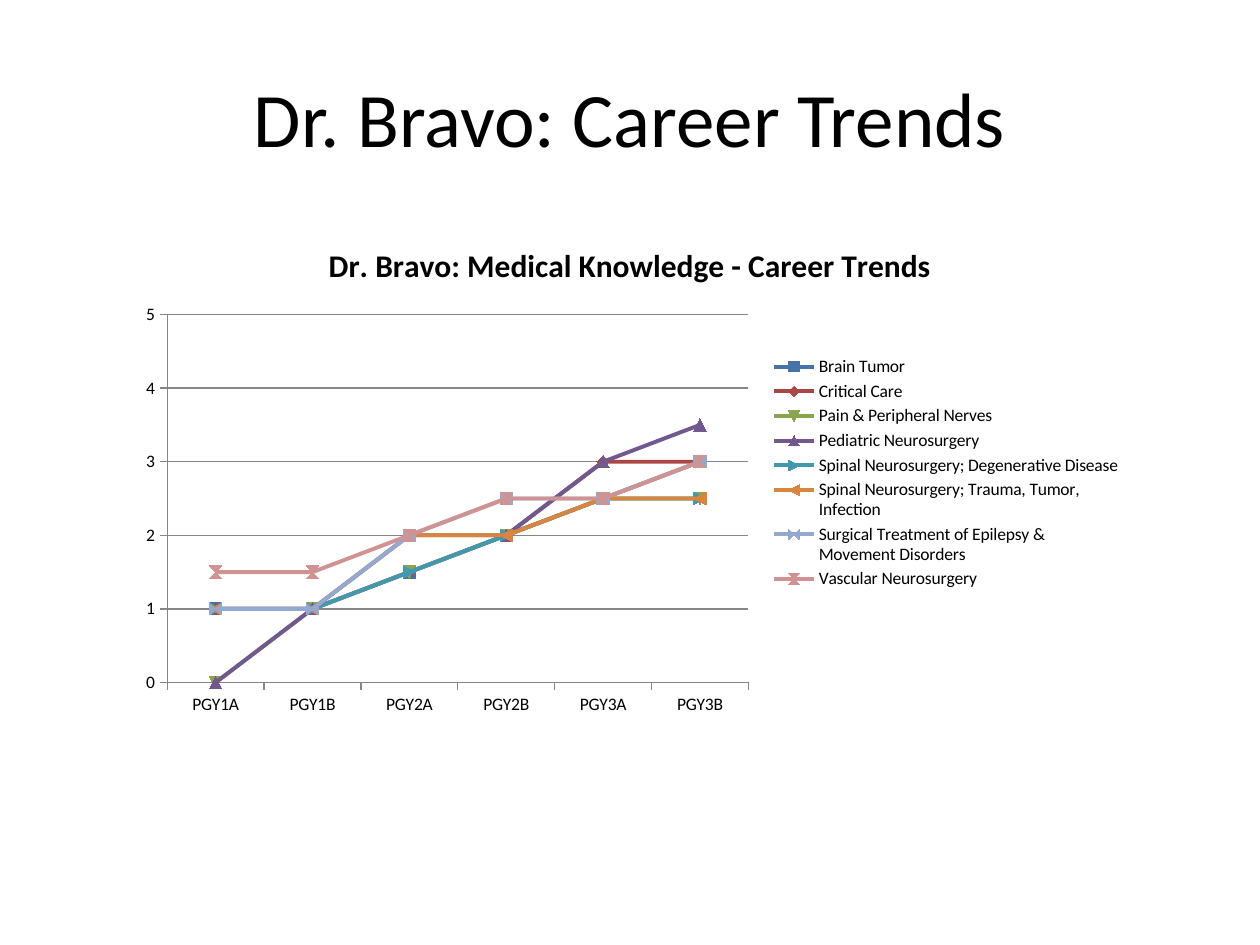
from pptx import Presentation
from pptx.chart.data import CategoryChartData
from pptx.dml.color import RGBColor
from pptx.enum.chart import XL_CHART_TYPE, XL_LEGEND_POSITION, XL_TICK_MARK
from pptx.enum.text import MSO_ANCHOR, PP_ALIGN
from pptx.util import Cm, Pt

BLACK = RGBColor(0x00, 0x00, 0x00)
GREY = RGBColor(0x86, 0x86, 0x86)
BLUE = RGBColor(0x45, 0x72, 0xA7)
RED = RGBColor(0xAA, 0x46, 0x43)
GREEN = RGBColor(0x89, 0xA5, 0x4E)
PURPLE = RGBColor(0x71, 0x58, 0x8F)
TEAL = RGBColor(0x41, 0x98, 0xAF)
ORANGE = RGBColor(0xDB, 0x84, 0x3D)
SKY = RGBColor(0x93, 0xA9, 0xCF)
ROSE = RGBColor(0xD1, 0x93, 0x92)

YEARS = ["PGY1A", "PGY1B", "PGY2A", "PGY2B", "PGY3A", "PGY3B"]
TRENDS = [
    ("Brain Tumor", BLUE, (1, 1, 1.5, 2, 2.5, 3)),
    ("Critical Care", RED, (1, 1, 1.5, 2, 3, 3)),
    ("Pain & Peripheral Nerves", GREEN, (0, 1, 1.5, 2, 2.5, 2.5)),
    ("Pediatric Neurosurgery", PURPLE, (0, 1, 2, 2, 3, 3.5)),
    ("Spinal Neurosurgery; Degenerative Disease", TEAL, (1, 1, 1.5, 2, 2.5, 2.5)),
    ("Spinal Neurosurgery; Trauma, Tumor, Infection", ORANGE, (1, 1, 2, 2, 2.5, 2.5)),
    ("Surgical Treatment of Epilepsy & Movement Disorders", SKY, (1, 1, 2, 2.5, 2.5, 3)),
    ("Vascular Neurosurgery", ROSE, (1.5, 1.5, 2, 2.5, 2.5, 3)),
]


class Deck:
    """Holds the style and the current slide."""

    face = "Calibri"
    ink = BLACK

    def __init__(self, wide, high):
        self.show = Presentation()
        self.show.slide_width, self.show.slide_height = wide, high
        self.slide = self.show.slides.add_slide(self.show.slide_layouts[6])

    def style(self, font, size, bold=False):
        font.name, font.size, font.bold = self.face, Pt(size), bold
        font.color.rgb = self.ink

    def add_text(self, para, text, size, bold=False):
        run = para.add_run()
        run.text = text
        self.style(run.font, size, bold)

    def title(self, text, box):
        frame = self.slide.shapes.add_textbox(*box).text_frame
        frame.word_wrap = True
        frame.vertical_anchor = MSO_ANCHOR.MIDDLE
        para = frame.paragraphs[0]
        para.alignment = PP_ALIGN.CENTER
        self.add_text(para, text, 44)

    def stroke(self, line, color, width):
        line.color.rgb = color
        line.width = Pt(width)

    def chart(self, head, years, trends, box):
        data = CategoryChartData()
        data.categories = years
        for name, _, vals in trends:
            data.add_series(name, vals)
        chart = self.slide.shapes.add_chart(
            XL_CHART_TYPE.LINE_MARKERS, *box, data).chart
        self.style(chart.font, 10)

        # Heading and legend
        chart.has_title = True
        self.add_text(chart.chart_title.text_frame.paragraphs[0], head, 18, True)
        chart.chart_title.include_in_layout = False
        chart.has_legend = True
        chart.legend.position = XL_LEGEND_POSITION.RIGHT
        chart.legend.include_in_layout = False

        # Axes
        for axis in (chart.category_axis, chart.value_axis):
            axis.major_tick_mark = XL_TICK_MARK.OUTSIDE
            axis.minor_tick_mark = XL_TICK_MARK.NONE
            self.stroke(axis.format.line, GREY, 0.75)
        scale = chart.value_axis
        scale.minimum_scale, scale.maximum_scale, scale.major_unit = 0, 5, 1
        scale.tick_labels.number_format = "0"
        scale.tick_labels.number_format_is_linked = False
        scale.has_major_gridlines = True
        self.stroke(scale.major_gridlines.format.line, GREY, 0.75)

        # Lines and markers
        chart.plots[0].vary_by_categories = False
        for line, (_, color, _) in zip(chart.plots[0].series, trends):
            line.smooth = False
            self.stroke(line.format.line, color, 2.25)
            line.marker.size = 7
            line.marker.format.fill.solid()
            line.marker.format.fill.fore_color.rgb = color
            self.stroke(line.marker.format.line, color, 0.75)


def main():
    deck = Deck(Cm(25.4), Cm(19.05))
    deck.title("Dr. Bravo: Career Trends",
               (Cm(1.27), Cm(0.76), Cm(22.86), Cm(3.18)))
    deck.chart("Dr. Bravo: Medical Knowledge - Career Trends", YEARS, TRENDS,
               (Cm(2.54), Cm(4.45), Cm(20.32), Cm(10.16)))
    deck.show.save("out.pptx")


if __name__ == "__main__":
    main()
